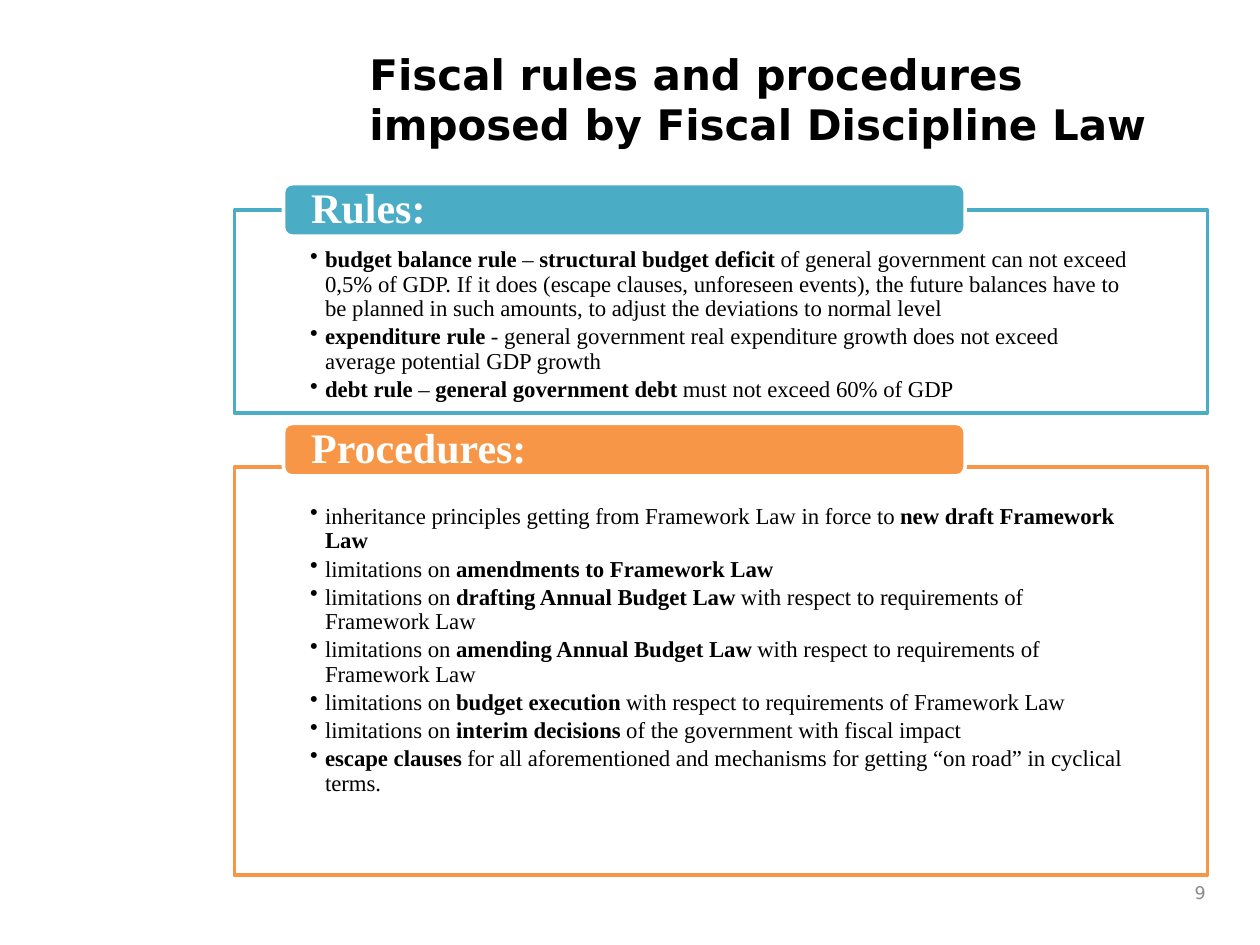
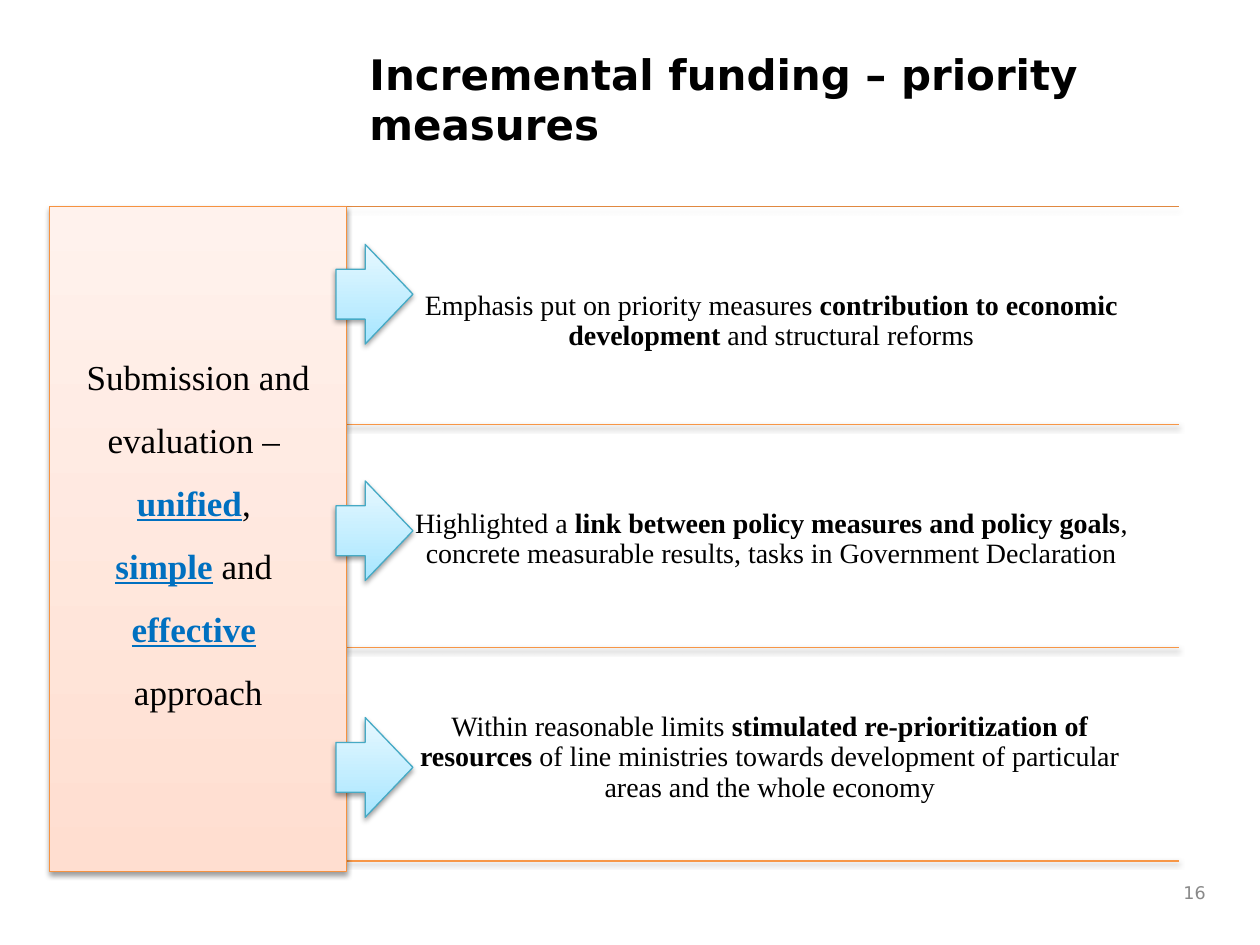
"""Builds two slides on fiscal rules and on funding of priority measures."""
from lxml.etree import SubElement
from pptx import Presentation
from pptx.dml.color import RGBColor
from pptx.enum.shapes import MSO_CONNECTOR as LINE, MSO_SHAPE as SHAPE
from pptx.enum.text import MSO_ANCHOR as ANCHOR, PP_ALIGN as ALIGN
from pptx.oxml.ns import qn
from pptx.util import Pt

COLORS = {name: RGBColor.from_string(code) for name, code in {
    "black": "000000", "white": "FFFFFF", "grey": "898989", "teal": "4BACC6",
    "orange": "F79646", "blue": "0070C0", "top_rule": "E08840",
    "panel_edge": "F69240", "panel_dark": "FFDED0", "panel_light": "FFF2ED",
    "arrow_edge": "46AAC5", "arrow_dark": "A7E6FF", "arrow_light": "E7F8FF",
}.items()}
SANS, SERIF = "DejaVu Sans", "Times New Roman"


def write(shape, paragraphs, size, font=SERIF, color="black", bold=False, accent=None,
          align=ALIGN.LEFT, anchor=ANCHOR.TOP, insets=(7.2, 3.6, 7.2, 3.6),
          spacing=1.0, after=0, bullet=False):
    """Fill a shape with text; parts between asterisks are emphasised."""
    frame = shape.text_frame
    frame.word_wrap = True
    frame.vertical_anchor = anchor
    (frame.margin_left, frame.margin_top,
     frame.margin_right, frame.margin_bottom) = map(Pt, insets)
    for index, text in enumerate(paragraphs):
        paragraph = frame.paragraphs[0] if index == 0 else frame.add_paragraph()
        if bullet:
            properties = paragraph._p.get_or_add_pPr()
            properties.set("marL", str(Pt(8.6)))
            properties.set("indent", str(-Pt(8.6)))
            SubElement(properties, qn("a:buChar")).set("char", "•")
        paragraph.alignment = align
        paragraph.line_spacing = spacing
        paragraph.space_after = Pt(after)
        for part, words in enumerate(text.split("*")):
            if not words:
                continue
            strong = part % 2 == 1
            run = paragraph.add_run()
            run.text = words
            run.font.name, run.font.size = font, Pt(size)
            run.font.bold = bold or strong
            run.font.underline = bool(strong and accent)
            run.font.color.rgb = COLORS[accent if strong and accent else color]


def cast_shadow(shape):
    """Put a soft shadow under a shape or a connector."""
    effects = SubElement(shape._element.spPr, qn("a:effectLst"))
    shadow = SubElement(effects, qn("a:outerShdw"), blurRad=str(Pt(3.1)),
                        dist=str(Pt(1.6)), dir="5400000", rotWithShape="0")
    black = SubElement(shadow, qn("a:srgbClr"), val="000000")
    SubElement(black, qn("a:alpha"), val="38000")


deck = Presentation()
deck.slide_width, deck.slide_height = Pt(720), Pt(540)
slides = []
for title, number in [
    ("Fiscal rules and procedures imposed by Fiscal Discipline Law", "9"),
    ("Incremental funding – priority measures", "16"),
]:
    slide = deck.slides.add_slide(deck.slide_layouts[6])
    heading = slide.shapes.add_textbox(Pt(204), Pt(24), Pt(480), Pt(84))
    write(heading, [title], 24, font=SANS, bold=True)
    page = slide.shapes.add_textbox(Pt(662.4), Pt(498), Pt(33.6), Pt(24))
    write(page, [number], 10, font=SANS, color="grey", align=ALIGN.RIGHT,
          anchor=ANCHOR.MIDDLE)
    slides.append(slide)
law, funding = slides

sections = [
    ("Rules:", "teal", 120, 116, 105, [
        "*budget balance rule* – *structural budget deficit* of general government can "
        "not exceed 0,5% of GDP. If it does (escape clauses, unforeseen events), the "
        "future balances have to be planned in such amounts, to adjust the deviations "
        "to normal level",
        "*expenditure rule* - general government real expenditure growth does not "
        "exceed average potential GDP growth",
        "*debt rule* – *general government debt* must not exceed 60% of GDP",
    ]),
    ("Procedures:", "orange", 266.8, 233.4, 242, [
        "inheritance principles getting from Framework Law in force to "
        "*new draft Framework Law*",
        "limitations on *amendments to Framework Law*",
        "limitations on *drafting Annual Budget Law* with respect to requirements of "
        "Framework Law",
        "limitations on *amending Annual Budget Law* with respect to requirements of "
        "Framework Law",
        "limitations on *budget execution* with respect to requirements of Framework Law",
        "limitations on *interim decisions* of the government with fiscal impact",
        "*escape clauses* for all aforementioned and mechanisms for getting “on road” "
        "in cyclical terms.",
    ]),
]
for name, tint, top, height, label_top, points in sections:
    body = law.shapes.add_shape(SHAPE.RECTANGLE, Pt(134), Pt(top), Pt(556), Pt(height))
    label = law.shapes.add_shape(SHAPE.ROUNDED_RECTANGLE, Pt(162), Pt(label_top),
                                 Pt(389.5), Pt(30))
    for shape, fill, edge in [(body, "white", tint), (label, tint, "white")]:
        shape.shadow.inherit = False
        shape.fill.solid()
        shape.fill.fore_color.rgb = COLORS[fill]
        shape.line.color.rgb = COLORS[edge]
        shape.line.width = Pt(2)
    write(body, points, 13, insets=(43.2, 21.6, 43.2, 7.2), spacing=0.9, after=2,
          bullet=True)
    write(label, [name], 24, color="white", bold=True, anchor=ANCHOR.MIDDLE,
          insets=(14.4, 0, 14.4, 0), spacing=0.9)

for left, y, tint in [(28.4, 118.2, "top_rule"), (198.2, 242.6, "orange"),
                      (198.2, 370, "orange"), (198.2, 492, "orange")]:
    rule = funding.shapes.add_connector(LINE.STRAIGHT, Pt(left), Pt(y), Pt(673.6), Pt(y))
    rule.line.color.rgb = COLORS[tint]
    rule.line.width = Pt(0.75)
    cast_shadow(rule)

panel = funding.shapes.add_shape(SHAPE.RECTANGLE, Pt(28.4), Pt(118.2), Pt(169.8), Pt(380))
arrows = [funding.shapes.add_shape(SHAPE.RIGHT_ARROW, Pt(192), Pt(139.6 + 135.2 * row),
                                   Pt(44), Pt(57)) for row in range(3)]
for shape, kind in [(panel, "panel")] + [(arrow, "arrow") for arrow in arrows]:
    shape.fill.gradient()
    shape.fill.gradient_angle = 90
    for stop, shade in zip(shape.fill.gradient_stops, ("dark", "light")):
        stop.color.rgb = COLORS[f"{kind}_{shade}"]
    shape.line.color.rgb = COLORS[f"{kind}_edge"]
    shape.line.width = Pt(0.75)
    cast_shadow(shape)
for arrow in arrows:
    arrow.adjustments[1] = 0.62
write(panel, ["Submission and evaluation – ", "*unified*, ", "*simple* and ",
              "*effective* ", "approach"], 20, accent="blue", align=ALIGN.CENTER,
      insets=(5, 73, 5, 5), spacing=1.5)

measures = [
    (207.4, 466.6, "Emphasis put on priority measures *contribution to economic "
                   "development* and structural reforms"),
    (207.4, 466.6, "Highlighted a *link between policy measures and policy goals*, "
                   "concrete measurable results, tasks in Government Declaration"),
    (220.4, 439, "Within reasonable limits *stimulated re-prioritization of resources* "
                 "of line ministries towards development of particular areas and the "
                 "whole economy"),
]
for row, (left, width, statement) in enumerate(measures):
    measure = funding.shapes.add_textbox(Pt(left), Pt(124 + 124.8 * row), Pt(width), Pt(119))
    write(measure, [statement], 16, align=ALIGN.CENTER, anchor=ANCHOR.MIDDLE,
          insets=(5, 5, 5, 5), spacing=0.9)

deck.save("out.pptx")
